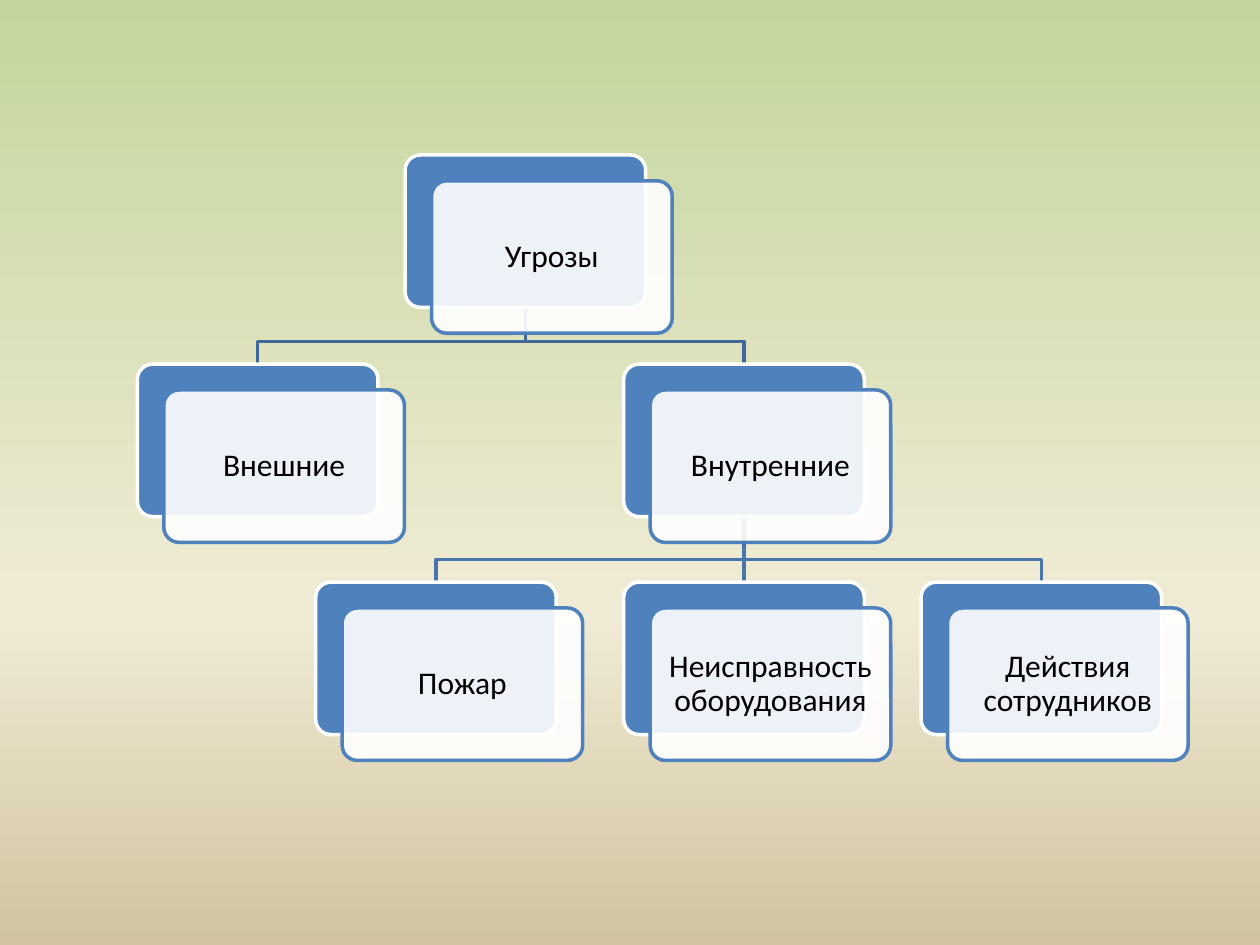
from copy import deepcopy
from dataclasses import dataclass

from lxml import etree
from pptx import Presentation
from pptx.dml.color import RGBColor
from pptx.enum import shapes, text
from pptx.oxml.ns import qn
from pptx.util import Inches, Pt


@dataclass(frozen=True)
class Theme:
    font: str = "Calibri"
    size: float = 18
    line: float = 2
    ink: str = "000000"
    blue: str = "4F81BD"
    white: str = "FFFFFF"
    upper_link: str = "3F6797"
    lower_link: str = "4875AC"
    background: tuple = ((0, "C3D69B"), (0.65, "F0EBD5"), (1, "D1C39F"))


THEME = Theme()
CARD_W, CARD_H = 1.91, 1.21
SHIFT_X, SHIFT_Y = 0.21, 0.205  # front card relative to the back card
ELBOW = 0.18                    # height of the bend above the lower card
ROWS = (1.23, 2.89, 4.62)

# name: (left, row, label)
CARDS = {
    "threats": (3.215, 0, "Угрозы"),
    "external": (1.09, 1, "Внешние"),
    "internal": (4.95, 1, "Внутренние"),
    "fault": (4.95, 2, "Неисправность оборудования"),
    "fire": (2.505, 2, "Пожар"),
    "staff": (7.31, 2, "Действия сотрудников"),
}
LINKS = (
    ("internal", ("staff", "fire", "fault"), THEME.lower_link),
    ("threats", ("internal", "external"), THEME.upper_link),
)


def rgb(value):
    return RGBColor.from_string(value)


def paint_background(slide):
    fill = slide.background.fill
    fill.gradient()
    fill.gradient_angle = 270
    stop_list = next(slide.element.iter(qn("a:gsLst")))
    stop_list.insert(1, deepcopy(stop_list[0]))
    for stop, (position, color) in zip(fill.gradient_stops, THEME.background):
        stop.position = position
        stop.color.rgb = rgb(color)


def set_line(sp, color):
    sp.line.color.rgb = rgb(color)
    sp.line.width = Pt(THEME.line)


def add_text(sp, words, size=THEME.size, color=THEME.ink, inset=0.1):
    tf = sp.text_frame
    tf.word_wrap = True
    tf.vertical_anchor = text.MSO_ANCHOR.MIDDLE
    tf.margin_left = tf.margin_right = Inches(inset)
    tf.margin_top = tf.margin_bottom = Inches(inset)
    p = tf.paragraphs[0]
    p.alignment = text.PP_ALIGN.CENTER
    p.line_spacing = 0.9
    r = p.add_run()
    r.text = words
    r.font.name = THEME.font
    r.font.size = Pt(size)
    r.font.color.rgb = rgb(color)


def add_panel(group, left, top, fill, line, opacity=None):
    sp = group.shapes.add_shape(
        shapes.MSO_SHAPE.ROUNDED_RECTANGLE,
        Inches(left), Inches(top), Inches(CARD_W), Inches(CARD_H))
    sp.adjustments[0] = 0.1
    sp.shadow.inherit = False
    sp.fill.solid()
    sp.fill.fore_color.rgb = rgb(fill)
    set_line(sp, line)
    if opacity is not None:
        color = sp.element.spPr.find(qn("a:solidFill"))[0]
        etree.SubElement(color, qn("a:alpha"), val=str(opacity * 1000))
    return sp


def add_card(group, left, top, label):
    """Place a solid back panel and a translucent labelled panel over it."""
    add_panel(group, left, top, THEME.blue, THEME.white)
    front = add_panel(group, left + SHIFT_X, top + SHIFT_Y,
                      THEME.white, THEME.blue, opacity=90)
    add_text(front, label)


def add_link(group, start, end, color):
    """Join two points, bending a little above the lower one."""
    (x1, y1), (x2, y2) = [(Inches(x), Inches(y)) for x, y in (start, end)]
    if x1 == x2:
        sp = group.shapes.add_connector(
            shapes.MSO_CONNECTOR.STRAIGHT, x1, y1, x2, y2)
        etree.SubElement(sp.element.spPr, qn("a:effectLst"))
    else:
        bend = y2 - Inches(ELBOW)
        outline = group.shapes.build_freeform(x1, y1)
        outline.add_line_segments([(x1, bend), (x2, bend), (x2, y2)], close=False)
        sp = outline.convert_to_shape()
        sp.fill.background()
        sp.shadow.inherit = False
    set_line(sp, color)


def add_hierarchy(slide):
    group = slide.shapes.add_group_shape()
    for parent, children, color in LINKS:
        left, row, _ = CARDS[parent]
        start = (left + CARD_W / 2, ROWS[row] + CARD_H)
        for child in children:
            left, row, _ = CARDS[child]
            add_link(group, start, (left + CARD_W / 2, ROWS[row]), color)
    for left, row, label in CARDS.values():
        add_card(group, left, ROWS[row], label)


def main():
    prs = Presentation()
    prs.slide_width, prs.slide_height = Inches(10), Inches(7.5)
    slide = prs.slides.add_slide(prs.slide_layouts[6])
    paint_background(slide)
    add_hierarchy(slide)
    prs.save("out.pptx")


if __name__ == "__main__":
    main()
